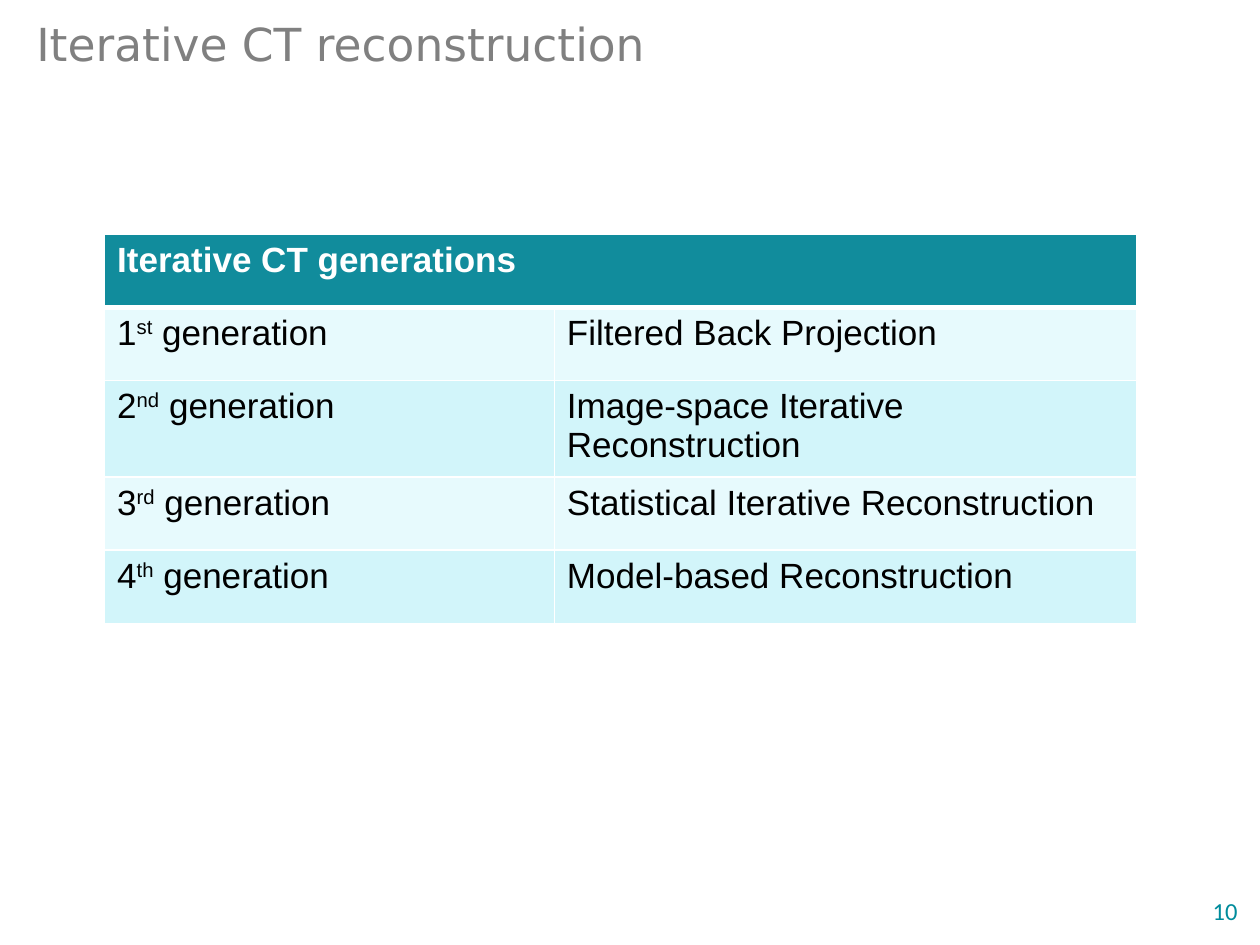
from lxml import etree
from pptx import Presentation
from pptx.dml.color import RGBColor
from pptx.enum.text import PP_ALIGN
from pptx.oxml.ns import qn
from pptx.util import Inches, Pt

LEFT, RIGHT = PP_ALIGN.LEFT, PP_ALIGN.RIGHT
WHITE = RGBColor(0xFF, 0xFF, 0xFF)
BLACK = RGBColor(0, 0, 0)
GREY = RGBColor(0x80, 0x80, 0x80)
TEAL = RGBColor(0x00, 0x8C, 0x9C)
HEADER_TEAL = RGBColor(0x11, 0x8C, 0x9C)
BANDS = (RGBColor(0xE7, 0xFA, 0xFD), RGBColor(0xD2, 0xF5, 0xFA))

COLUMN_WIDTHS = (3.57, 4.62)
ROW_HEIGHT = 0.58
GENERATIONS = (
    ("1", "st", "Filtered Back Projection"),
    ("2", "nd", "Image-space Iterative Reconstruction"),
    ("3", "rd", "Statistical Iterative Reconstruction"),
    ("4", "th", "Model-based Reconstruction"),
)


def set_font(paragraph, name, size, color, bold=False):
    """Set the font shared by all runs of a paragraph."""
    font = paragraph.font
    font.name, font.size, font.bold = name, Pt(size), bold
    font.color.rgb = color


def add_label(slide, box, text, name, size, color, align=LEFT):
    """Add a one-paragraph text box and return its paragraph."""
    label = slide.shapes.add_textbox(*map(Inches, box))
    label.text_frame.word_wrap = True
    paragraph = label.text_frame.paragraphs[0]
    paragraph.text = text
    paragraph.alignment = align
    set_font(paragraph, name, size, color)
    return paragraph


def set_borders(cell, top=1, bottom=1):
    """Give a cell white borders, with widths in points."""
    properties = cell._tc.get_or_add_tcPr()
    for side, width in (("L", 1), ("R", 1), ("T", top), ("B", bottom)):
        line = etree.SubElement(properties, qn(f"a:ln{side}"), w=str(Pt(width)))
        fill = etree.SubElement(line, qn("a:solidFill"))
        etree.SubElement(fill, qn("a:srgbClr"), val=str(WHITE))


def fill_cell(cell, parts, fill, color=BLACK, bold=False, top=1, bottom=1):
    """Write (text, is_superscript) parts into a styled cell."""
    set_borders(cell, top, bottom)
    cell.fill.solid()
    cell.fill.fore_color.rgb = fill
    paragraph = cell.text_frame.paragraphs[0]
    for text, is_superscript in parts:
        run = paragraph.add_run()
        run.text = text
        if is_superscript:
            run._r.get_or_add_rPr().set("baseline", "30000")
    set_font(paragraph, "Arial", 20, color, bold)


def add_generations_table(slide):
    """Add the table of iterative CT generations."""
    row_count = len(GENERATIONS) + 1
    table = slide.shapes.add_table(
        row_count, len(COLUMN_WIDTHS), Inches(0.83), Inches(1.86),
        Inches(sum(COLUMN_WIDTHS)), Inches(ROW_HEIGHT * row_count),
    ).table
    for column, width in zip(table.columns, COLUMN_WIDTHS):
        column.width = Inches(width)

    header, header_end = table.cell(0, 0), table.cell(0, 1)
    header.merge(header_end)
    fill_cell(header, [("Iterative CT generations", False)], HEADER_TEAL,
              WHITE, bold=True, bottom=3)
    set_borders(header_end, bottom=3)

    for row, (number, ordinal, method) in enumerate(GENERATIONS, start=1):
        band = BANDS[(row - 1) % 2]
        top = 3 if row == 1 else 1
        generation = [(number, False), (ordinal, True), (" generation", False)]
        fill_cell(table.cell(row, 0), generation, band, top=top)
        fill_cell(table.cell(row, 1), [(method, False)], band, top=top)


def main():
    """Build and save the slide."""
    presentation = Presentation()
    presentation.slide_width, presentation.slide_height = Inches(10), Inches(7.5)
    slide = presentation.slides.add_slide(presentation.slide_layouts[6])
    title = add_label(slide, (0.19, 0.1, 9.21, 0.52),
                      "Iterative CT reconstruction", "DejaVu Sans", 26, GREY)
    title.line_spacing = 0.98
    add_generations_table(slide)
    add_label(slide, (9.41, 7.06, 0.51, 0.32), "10", "Calibri", 14, TEAL, RIGHT)
    presentation.save("out.pptx")


if __name__ == "__main__":
    main()
